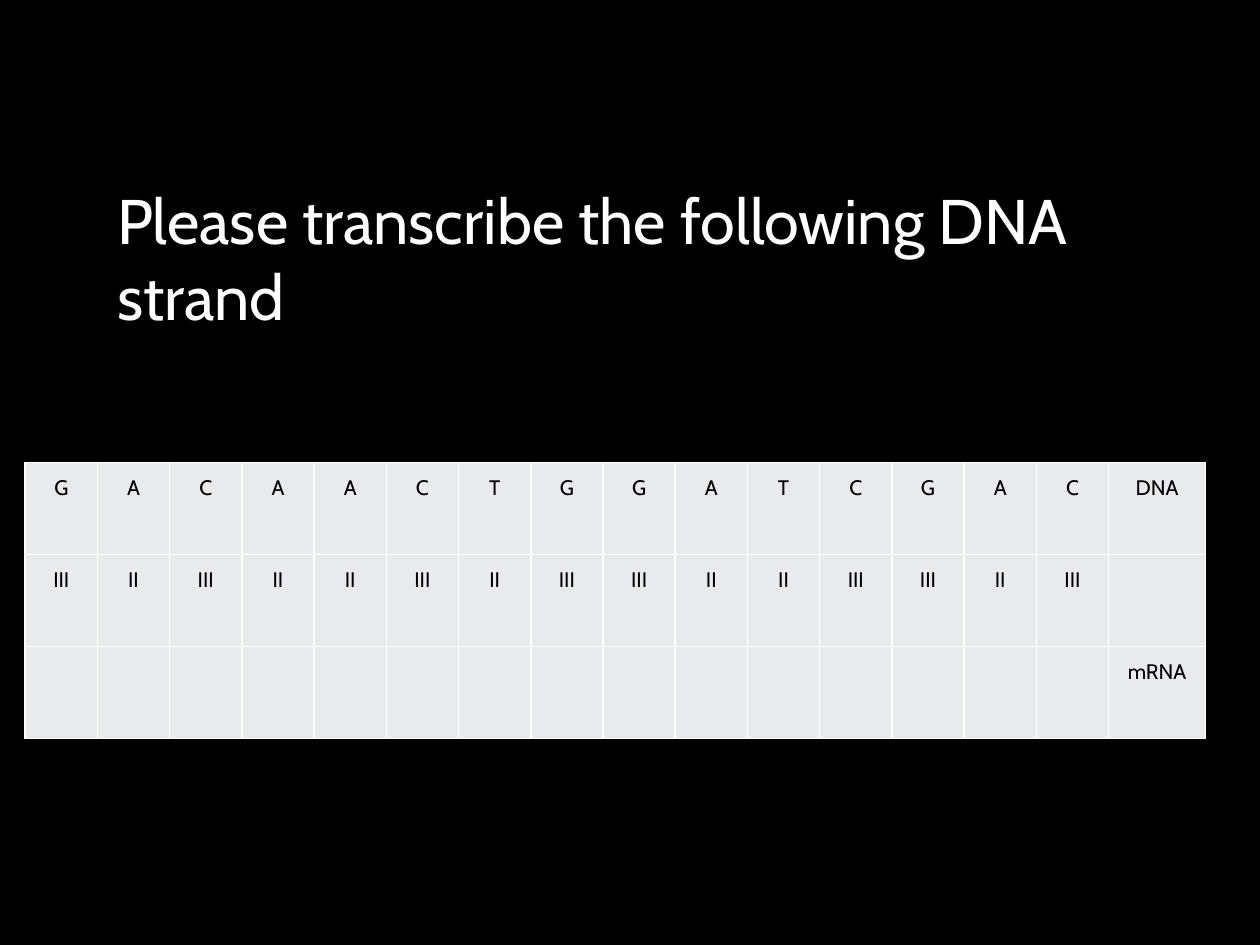
from dataclasses import dataclass

from lxml.etree import SubElement
from pptx import Presentation
from pptx.dml.color import RGBColor
from pptx.enum.text import MSO_ANCHOR, MSO_AUTO_SIZE, PP_ALIGN
from pptx.oxml.ns import qn
from pptx.util import Inches, Pt

BLACK = RGBColor(0x00, 0x00, 0x00)
WHITE = RGBColor(0xFF, 0xFF, 0xFF)
CELL_GREY = RGBColor(0xE9, 0xEA, 0xEC)
FONT_NAME = "Cabin"

DNA_STRAND = "GACAACTGGATCGAC"
HYDROGEN_BONDS = {"A": "II", "T": "II", "C": "III", "G": "III"}

TABLE_WIDTH = 9.37
LABEL_WIDTH = 0.77
ROW_HEIGHT = 0.73


@dataclass
class StrandRow:
    values: list[str]
    label: str = ""


ROWS = [
    StrandRow(list(DNA_STRAND), "DNA"),
    StrandRow([HYDROGEN_BONDS[base] for base in DNA_STRAND]),
    StrandRow([""] * len(DNA_STRAND), "mRNA"),
]


def format_text(paragraph, size: float, color: RGBColor, alignment: PP_ALIGN) -> None:
    paragraph.alignment = alignment
    paragraph.font.name = FONT_NAME
    paragraph.font.size = Pt(size)
    paragraph.font.color.rgb = color


def add_borders(cell, color: RGBColor, width: float) -> None:
    properties = cell._tc.get_or_add_tcPr()
    for position, side in enumerate(("a:lnL", "a:lnR", "a:lnT", "a:lnB")):
        line = SubElement(properties, qn(side), w=str(Pt(width)))
        fill = SubElement(line, qn("a:solidFill"))
        SubElement(fill, qn("a:srgbClr"), val=str(color))
        properties.insert(position, line)


def fill_cell(cell, text: str) -> None:
    cell.fill.solid()
    cell.fill.fore_color.rgb = CELL_GREY
    cell.margin_left = cell.margin_right = Inches(0.07)
    cell.margin_top = cell.margin_bottom = 0
    cell.text = text
    paragraph = cell.text_frame.paragraphs[0]
    format_text(paragraph, 12, BLACK, PP_ALIGN.CENTER)
    paragraph.line_spacing = 1.5
    add_borders(cell, WHITE, 1)


def add_title(slide, text: str) -> None:
    title = slide.shapes.title
    title.left, title.top = Inches(0.83), Inches(1.39)
    title.width, title.height = Inches(9.1), Inches(0.71)
    frame = title.text_frame
    frame.text = text
    frame.word_wrap = True
    frame.auto_size = MSO_AUTO_SIZE.SHAPE_TO_FIT_TEXT
    frame.vertical_anchor = MSO_ANCHOR.TOP
    format_text(frame.paragraphs[0], 36, WHITE, PP_ALIGN.LEFT)


def add_strand_table(slide, rows: list[StrandRow]) -> None:
    base_count = len(DNA_STRAND)
    table = slide.shapes.add_table(
        len(rows), base_count + 1, Inches(0.2), Inches(3.67),
        Inches(TABLE_WIDTH), Inches(ROW_HEIGHT * len(rows)),
    ).table
    table.first_row = table.horz_banding = False

    # Equal columns for the bases, a wider one for the labels
    for column in table.columns:
        column.width = Inches((TABLE_WIDTH - LABEL_WIDTH) / base_count)
    table.columns[base_count].width = Inches(LABEL_WIDTH)

    for row_index, row in enumerate(rows):
        table.rows[row_index].height = Inches(ROW_HEIGHT)
        for column_index, text in enumerate([*row.values, row.label]):
            fill_cell(table.cell(row_index, column_index), text)


def main() -> None:
    presentation = Presentation()
    presentation.slide_width, presentation.slide_height = Inches(10), Inches(7.5)
    slide = presentation.slides.add_slide(presentation.slide_layouts[5])

    # Background
    slide.background.fill.solid()
    slide.background.fill.fore_color.rgb = BLACK

    # Strand table and task
    add_strand_table(slide, ROWS)
    add_title(slide, "Please transcribe the following DNA strand")

    presentation.save("out.pptx")


if __name__ == "__main__":
    main()
